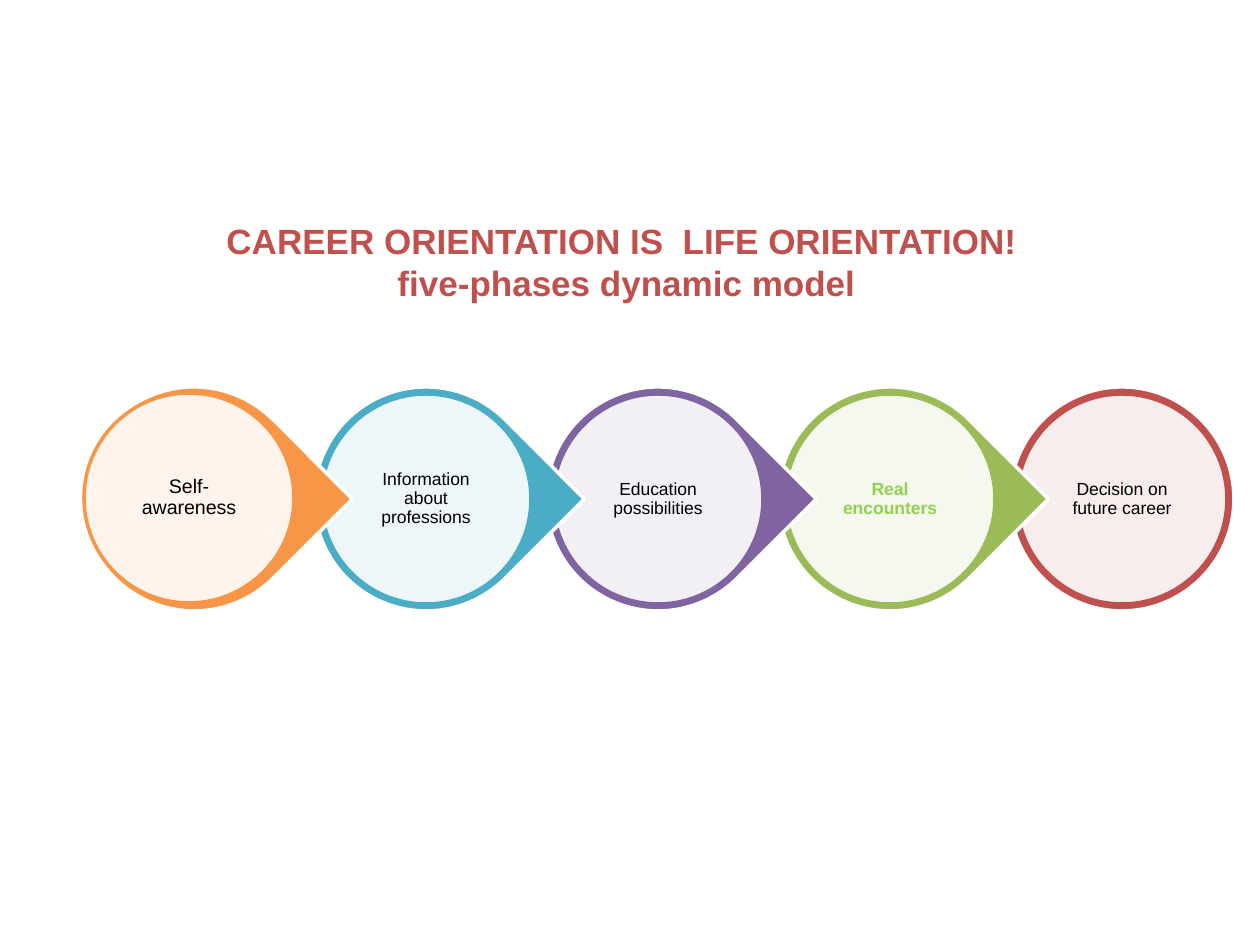
from dataclasses import dataclass

from lxml import etree
from pptx import Presentation
from pptx import util as u
from pptx.dml.color import RGBColor
from pptx.enum import shapes, text
from pptx.oxml.ns import qn


@dataclass(frozen=True)
class Theme:
    font: str = "Arial"
    accent: str = "C0504D"
    ink: str = "000000"
    highlight: str = "92D050"
    white: str = "FFFFFF"
    disc_opacity: int = 90
    title_pt: float = 20
    label_pt: float = 10
    first_label_pt: float = 11.2
    line_pt: float = 2


THEME = Theme()


@dataclass(frozen=True)
class Phase:
    label: str
    color: str
    outline: shapes.MSO_SHAPE = shapes.MSO_SHAPE.TEAR
    label_color: str = THEME.ink
    label_pt: float = THEME.label_pt
    bold: bool = False
    inset: tuple[int, int] = (7, 7)  # disc offset inside the outline
    margin: int = 1


PHASES = [
    Phase("Self-awareness", "F79646", label_pt=THEME.first_label_pt,
          inset=(2, 6), margin=2),
    Phase("Information about professions", "4BACC6"),
    Phase("Education possibilities", "8064A2"),
    Phase("Real encounters", "9BBB59", label_color=THEME.highlight, bold=True),
    Phase("Decision on future career", THEME.accent,
          outline=shapes.MSO_SHAPE.OVAL),
]

# Lengths in px, 126 to the inch
LEFT, TOP, PITCH = 82, 387, 232
OUTER, DISC, LABEL = 224, 210, 106


def px(n: int) -> u.Emu:
    return u.Emu(round(n * 914400 / 126))


def rgb(color: str) -> RGBColor:
    return RGBColor.from_string(color)


def add_filled(parent, kind: shapes.MSO_SHAPE, x: int, y: int, size: int,
               fill: str, line: str):
    sp = parent.add_shape(kind, px(x), px(y), px(size), px(size))
    sp.shadow.inherit = False
    sp.fill.solid()
    sp.fill.fore_color.rgb = rgb(fill)
    sp.line.color.rgb = rgb(line)
    sp.line.width = u.Pt(THEME.line_pt)
    return sp


def set_opacity(sp, percent: int) -> None:
    clr = sp.fill._xPr.find(qn("a:solidFill")).find(qn("a:srgbClr"))
    etree.SubElement(clr, qn("a:alpha")).set("val", str(percent * 1000))


def style(p, size: float, color: str, bold: bool) -> None:
    p.alignment = text.PP_ALIGN.CENTER
    p.font.name = THEME.font
    p.font.size = u.Pt(size)
    p.font.bold = bold
    p.font.color.rgb = rgb(color)


def add_label(parent, phase: Phase, x: int, y: int) -> None:
    tf = parent.add_textbox(px(x), px(y), px(LABEL), px(LABEL)).text_frame
    tf.word_wrap = True
    tf.vertical_anchor = text.MSO_ANCHOR.MIDDLE
    tf.margin_left = tf.margin_right = px(phase.margin)
    tf.margin_top = tf.margin_bottom = px(phase.margin)
    p = tf.paragraphs[0]
    p.text = phase.label
    p.line_spacing = 0.9
    style(p, phase.label_pt, phase.label_color, phase.bold)


def add_phase(parent, phase: Phase, x: int) -> None:
    outline = add_filled(parent, phase.outline, x, TOP, OUTER,
                         phase.color, THEME.white)
    if phase.outline == shapes.MSO_SHAPE.TEAR:
        outline.adjustments[0] = 1
        outline.rotation = 45
    dx, dy = phase.inset
    disc = add_filled(parent, shapes.MSO_SHAPE.OVAL, x + dx, TOP + dy, DISC,
                      THEME.white, phase.color)
    set_opacity(disc, THEME.disc_opacity)
    pad = (DISC - LABEL) // 2
    add_label(parent, phase, x + dx + pad, TOP + dy + pad)


def add_title(parent, lines: list[str]) -> None:
    tf = parent.add_textbox(px(83), px(213), px(1087), px(97)).text_frame
    tf.word_wrap = True
    for i, line in enumerate(lines):
        p = tf.add_paragraph() if i else tf.paragraphs[0]
        p.text = line
        style(p, THEME.title_pt, THEME.accent, True)


def main() -> None:
    prs = Presentation()
    prs.slide_width, prs.slide_height = px(1260), px(945)
    s = prs.slides.add_slide(prs.slide_layouts[6])
    chain = s.shapes.add_group_shape().shapes
    # Last phase first, so that each tip overlaps the next phase
    for i, phase in reversed(list(enumerate(PHASES))):
        add_phase(chain, phase, LEFT + i * PITCH)
    add_title(s.shapes, ["CAREER ORIENTATION IS  LIFE ORIENTATION! ",
                         "five-phases dynamic model"])
    prs.save("out.pptx")


if __name__ == "__main__":
    main()
